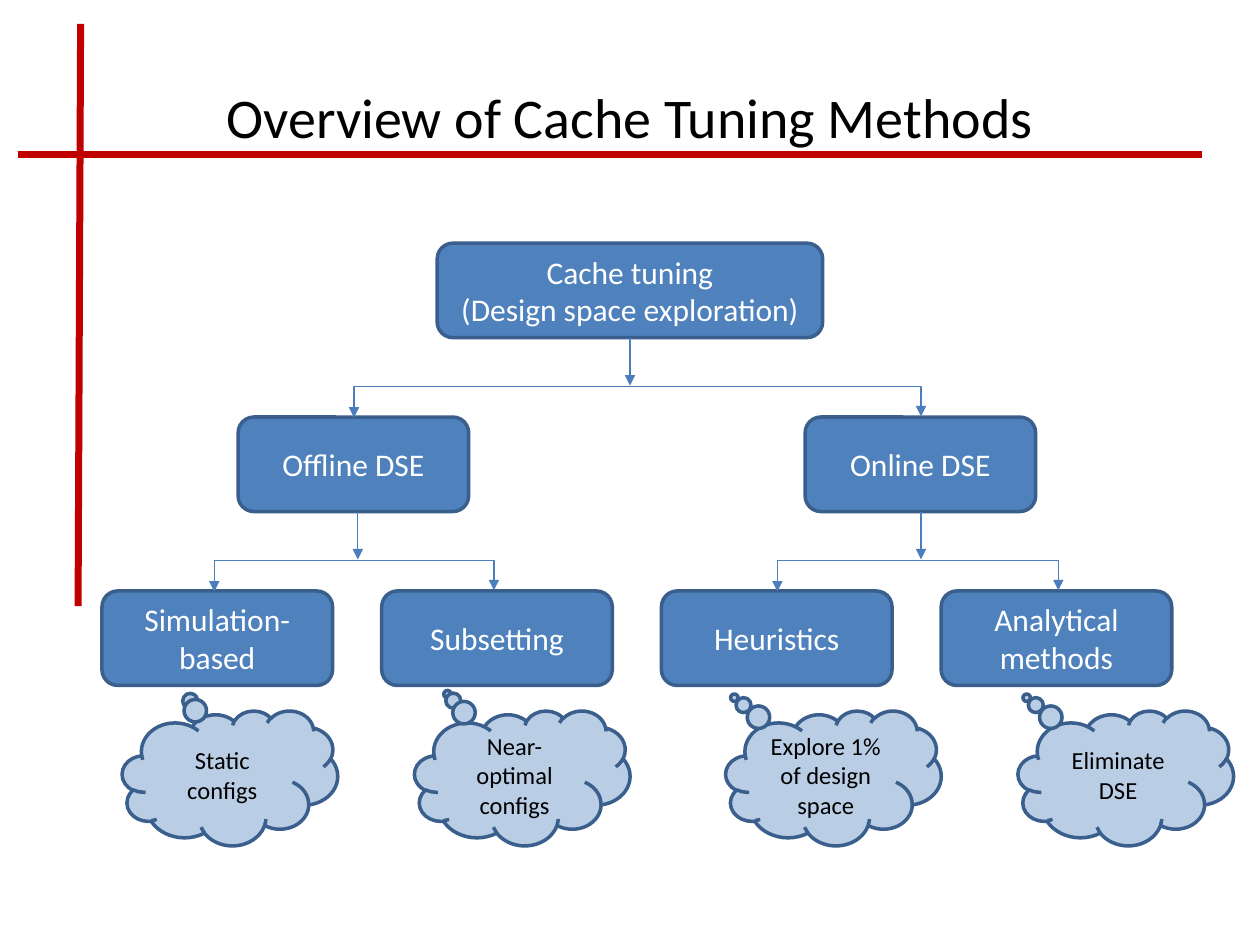
from lxml.etree import SubElement
from pptx import Presentation
from pptx.dml.color import RGBColor
from pptx.enum.shapes import MSO_CONNECTOR, MSO_SHAPE
from pptx.enum.text import MSO_ANCHOR, PP_ALIGN
from pptx.oxml.ns import qn
from pptx.util import Inches, Pt

FONT = "Calibri"
BOX_WIDTH, BOX_HEIGHT = 1.83, 0.75
CLOUD_TOP, CLOUD_WIDTH, CLOUD_HEIGHT = 5.64, 1.71, 1.07
ROOT_TOP, MODE_TOP, METHOD_TOP = 1.93, 3.31, 4.69
BRANCH_RISE = 0.25
METHODS = ["Simulation-based", "Subsetting", "Heuristics", "Analytical methods"]
# Left edge, text, and position of the callout's tip
CLOUDS = [
    (8.08, "Eliminate DSE", (-0.46, -0.596)),
    (5.76, "Explore 1% of design space", (-0.46, -0.596)),
    (3.29, "Near-optimal configs", (-0.347, -0.622)),
    (0.97, "Static configs", (-0.192, -0.596)),
]
# Centre of the stem, then the two ends of the branch below it
BRANCHES = [
    (ROOT_TOP, 5, 2.81, 7.31),
    (MODE_TOP, 2.84, 1.7, 3.92),
    (MODE_TOP, 7.31, 6.17, 8.4),
]


def color(hex_text):
    return RGBColor.from_string(hex_text)


def write(shape, text, size, hex_text):
    frame = shape.text_frame
    frame.word_wrap = True
    frame.vertical_anchor = MSO_ANCHOR.MIDDLE
    frame.text = text
    for para in frame.paragraphs:
        para.alignment = PP_ALIGN.CENTER
        para.font.name = FONT
        para.font.size = Pt(size)
        para.font.color.rgb = color(hex_text)


def add_title(page, text):
    title = page.shapes.title
    title.left, title.top = Inches(0.5), Inches(0.3)
    title.width, title.height = Inches(9), Inches(1.25)
    write(title, text, 32, "000000")


def add_node(page, kind, left, top, width, height, fill):
    shape = page.shapes.add_shape(
        kind, Inches(left), Inches(top), Inches(width), Inches(height))
    shape.shadow.inherit = False
    shape.fill.solid()
    shape.fill.fore_color.rgb = color(fill)
    shape.line.color.rgb = color("3A5F8C")
    shape.line.width = Pt(2)
    return shape


def add_box(page, text, left, top, width=BOX_WIDTH):
    box = add_node(page, MSO_SHAPE.ROUNDED_RECTANGLE,
                   left, top, width, BOX_HEIGHT, "4F81BD")
    write(box, text, 18, "FFFFFF")


def add_cloud(page, text, left, tip):
    cloud = add_node(page, MSO_SHAPE.CLOUD_CALLOUT,
                     left, CLOUD_TOP, CLOUD_WIDTH, CLOUD_HEIGHT, "B9CDE5")
    cloud.adjustments[0], cloud.adjustments[1] = tip
    write(cloud, text, 14, "000000")


def add_line(page, start, end, hex_text, width, arrows=(),
             kind=MSO_CONNECTOR.STRAIGHT):
    """Draw a connector; arrows names its pointed ends, headEnd before tailEnd."""
    line = page.shapes.add_connector(
        kind, *(Inches(value) for value in (*start, *end)))
    line.line.color.rgb = color(hex_text)
    line.line.width = Pt(width)
    outline = line.line._get_or_add_ln()
    for arrow in arrows:
        SubElement(outline, qn(f"a:{arrow}"), type="triangle")
    SubElement(line._element.spPr, qn("a:effectLst"))
    return line


def add_branch(page, parent_top, stem_x, left, right):
    """Lead a stem down from a box and fork it to the two boxes below."""
    child_top = parent_top + MODE_TOP - ROOT_TOP
    bottom = parent_top + BOX_HEIGHT
    # A quarter turn makes the thin, tall elbow lie flat with both ends down.
    center, half_span, half_depth = (left + right) / 2, (right - left) / 2, 0.005
    fork = add_line(
        page, (center + half_depth, child_top + half_span),
        (center - half_depth, child_top - half_span),
        "4B7EBC", 0.75, ("headEnd", "tailEnd"), MSO_CONNECTOR.ELBOW)
    properties = fork._element.spPr
    properties.find(qn("a:xfrm")).set("rot", str(90 * 60000))
    geometry = properties.find(qn("a:prstGeom"))
    rise = round(BRANCH_RISE / (2 * half_depth) * 100000)
    SubElement(geometry.find(qn("a:avLst")), qn("a:gd"),
               name="adj1", fmla=f"val {rise}")
    add_line(page, (stem_x, bottom), (stem_x, child_top - BRANCH_RISE),
             "4B7EBC", 0.75, ("tailEnd",))


def main():
    deck = Presentation()
    deck.slide_width, deck.slide_height = Inches(10), Inches(7.5)
    page = deck.slides.add_slide(deck.slide_layouts[5])

    add_line(page, (0.14, 1.23), (9.54, 1.23), "C00000", 4)
    add_line(page, (0.64, 0.19), (0.62, 4.81), "C00000", 4)
    add_title(page, "Overview of Cache Tuning Methods")

    add_box(page, "Cache tuning\n(Design space exploration)", 3.47, ROOT_TOP, 3.06)
    add_box(page, "Offline DSE", 1.89, MODE_TOP)
    add_box(page, "Online DSE", 6.39, MODE_TOP)
    for index, method in enumerate(METHODS):
        add_box(page, method, 0.81 + 2.22 * index, METHOD_TOP)
    for branch in BRANCHES:
        add_branch(page, *branch)
    for left, text, tip in CLOUDS:
        add_cloud(page, text, left, tip)

    deck.save("out.pptx")


if __name__ == "__main__":
    main()
